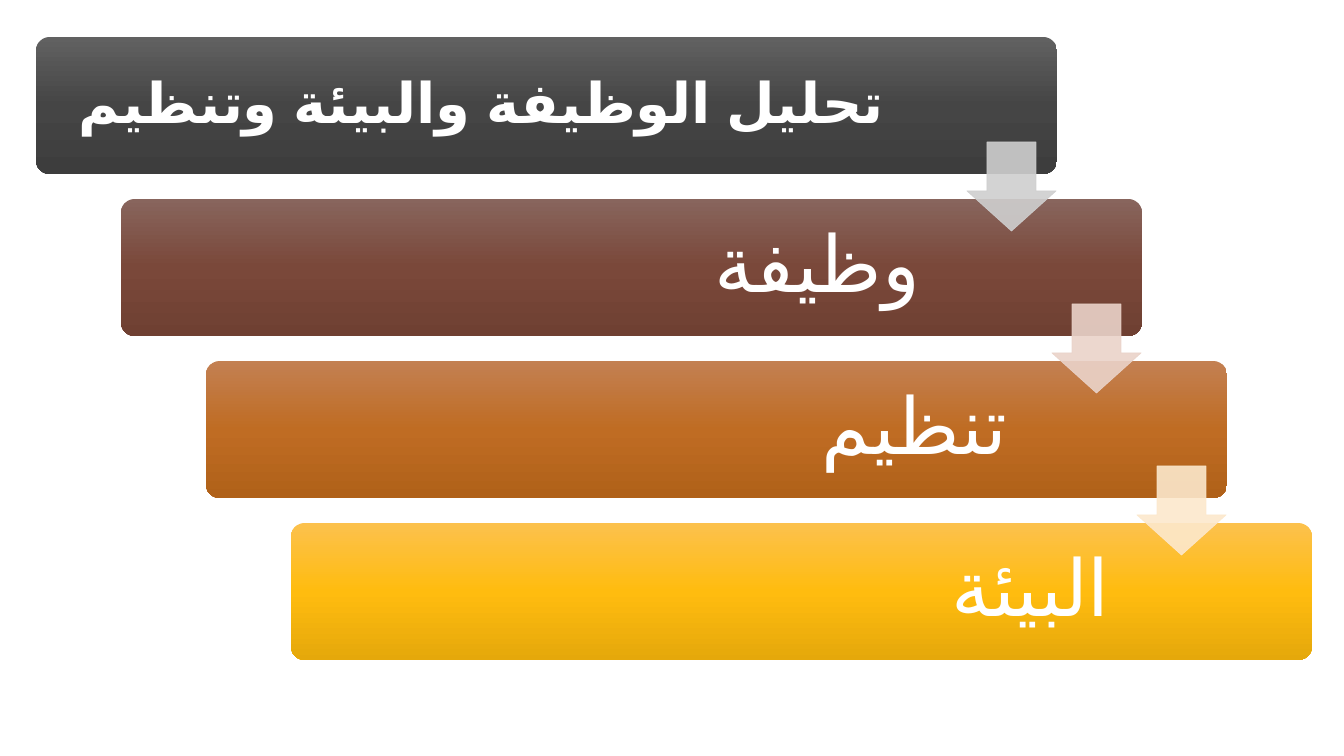
from copy import deepcopy

from pptx import Presentation
from pptx.dml.color import RGBColor
from pptx.enum.lang import MSO_LANGUAGE_ID as Language
from pptx.enum.shapes import MSO_SHAPE as Preset
from pptx.enum.text import MSO_ANCHOR as Anchor, PP_ALIGN as Align
from pptx.oxml.ns import qn
from pptx.oxml.xmlchemy import OxmlElement as new_element
from pptx.util import Emu, Pt

SCALE = 914400 / 100.8
COLOURS = {
    "text": "FFFFFF",
    "grey": ("616161", "454545", "3D3D3D"),
    "brown": ("88655D", "7A483A", "6F4032"),
    "orange": ("C38052", "BF6C23", "B06119"),
    "yellow": ("FCC14D", "FFBC0F", "E5A80B"),
    "grey arrow": "CFCFCF",
    "brown arrow": "EAD3C9",
    "orange arrow": "FCE8CC",
}
# colour, wording, text width, inset, font format
STEPS = [
    ("grey", "تحليل الوظيفة والبيئة وتنظيم", 861, 17, {"size": Pt(40), "bold": True}),
    ("brown", "وظيفة ", 838, 23, {"size": Pt(56)}),
    ("orange", "تنظيم ", 840, 23, {"size": Pt(56)}),
    ("yellow", "البيئة", 838, 23, {"size": Pt(56)}),
]
STEP_RIGHT, STEP_DOWN = 85, 162


def px(length):
    return Emu(round(length * SCALE))


def set_all(target, values):
    for name, value in values.items():
        setattr(target, name, value)


class Page:
    font = {"name": "Arial", "language_id": Language.ARABIC}
    opacity = 90

    def __init__(self, deck):
        self.shapes = deck.slides.add_slide(deck.slide_layouts[6]).shapes

    def preset(self, kind, place, adjustments):
        shape = self.shapes.add_shape(kind, *map(px, place))
        shape.shadow.inherit = False
        for index, value in enumerate(adjustments):
            shape.adjustments[index] = value
        return shape

    def bar(self, place, colours):
        """Rounded bar shaded from top to bottom through three colours."""
        shape = self.preset(Preset.ROUNDED_RECTANGLE, place, [0.1])
        shape.line.fill.background()
        fill = shape.fill
        fill.gradient()
        fill.gradient_angle = 270
        stop_list = shape.element.spPr.find(qn("a:gradFill")).find(qn("a:gsLst"))
        stop_list.insert(1, deepcopy(stop_list[0]))
        for stop, position, colour in zip(fill.gradient_stops, (0, 0.5, 1), colours):
            stop.position = position
            stop.color.rgb = RGBColor.from_string(colour)

    def label(self, place, wording, inset, font_format):
        frame = self.shapes.add_textbox(*map(px, place)).text_frame
        set_all(frame, {"word_wrap": True, "vertical_anchor": Anchor.MIDDLE})
        sides = ("left", "top", "right", "bottom")
        set_all(frame, {f"margin_{side}": px(inset) for side in sides})
        para = frame.paragraphs[0]
        set_all(para, {"alignment": Align.RIGHT, "line_spacing": 0.9})
        span = para.add_run()
        span.text = wording
        set_all(span.font, {**self.font, **font_format})
        span.font.color.rgb = RGBColor.from_string(COLOURS["text"])

    def arrow(self, place, colour):
        shape = self.preset(Preset.DOWN_ARROW, place, [0.55, 0.45])
        shape.line.width = Pt(0.5)
        for fill in (shape.fill, shape.line.fill):
            fill.solid()
            fill.fore_color.rgb = RGBColor.from_string(colour)
        for value in shape.element.spPr.iter(qn("a:srgbClr")):
            alpha = new_element("a:alpha")
            alpha.set("val", str(self.opacity * 1000))
            value.append(alpha)


def main():
    deck = Presentation()
    set_all(deck, {"slide_width": px(1344), "slide_height": px(756)})
    page = Page(deck)
    for index, (colour, wording, width, inset, font_format) in enumerate(STEPS):
        left, top = 36 + index * STEP_RIGHT, 37 + index * STEP_DOWN
        page.bar((left, top, 1021, 137), COLOURS[colour])
        page.label((left + 4, top + 4, width, 129), wording, inset, font_format)
    for index, (colour, *_) in enumerate(STEPS[:-1]):
        place = (967 + index * STEP_RIGHT, 142 + index * STEP_DOWN, 89, 89)
        page.arrow(place, COLOURS[f"{colour} arrow"])
    deck.save("out.pptx")


if __name__ == "__main__":
    main()
